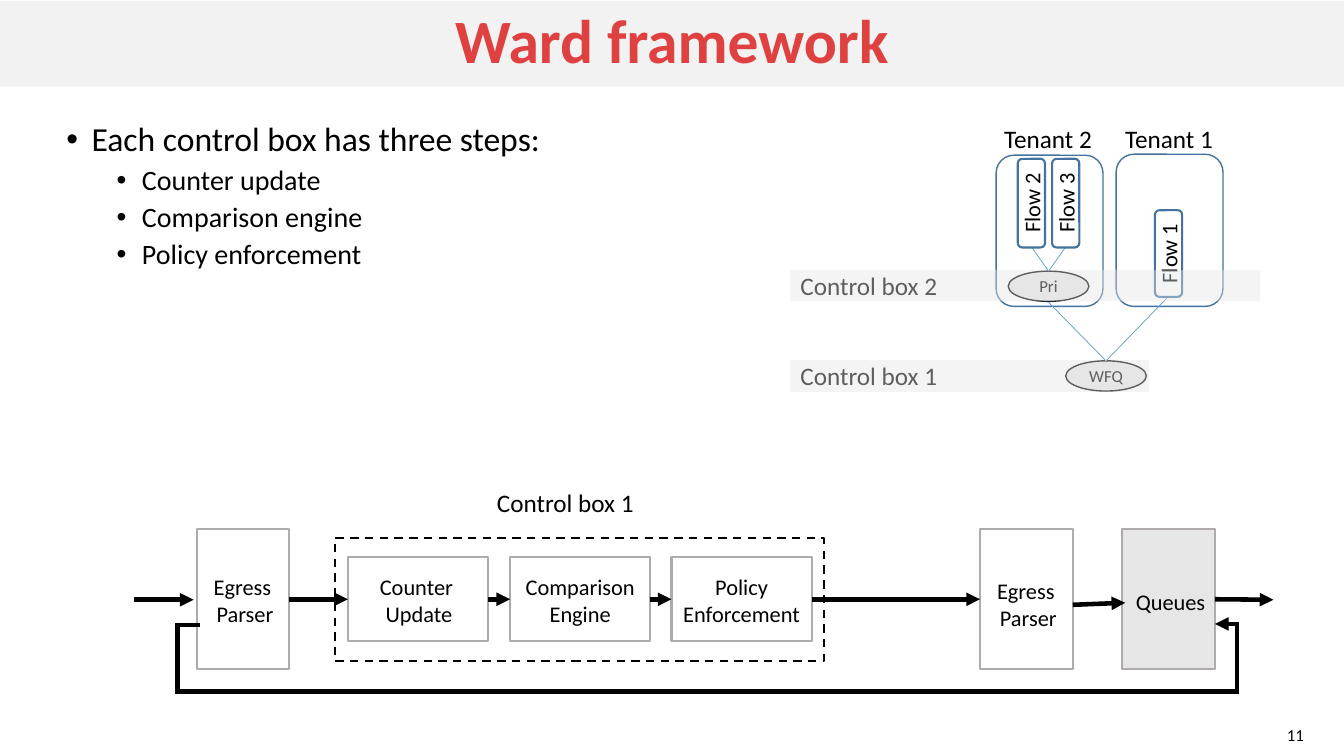
from lxml import etree
from pptx import Presentation
from pptx.dml.color import RGBColor
from pptx.enum.dml import MSO_LINE
from pptx.enum.shapes import MSO_CONNECTOR, MSO_SHAPE
from pptx.enum.text import MSO_ANCHOR, PP_ALIGN
from pptx.oxml.ns import qn
from pptx.util import Inches, Pt

RECT, ROUND, OVAL = MSO_SHAPE.RECTANGLE, MSO_SHAPE.ROUNDED_RECTANGLE, MSO_SHAPE.OVAL
STRAIGHT, DASH = MSO_CONNECTOR.STRAIGHT, MSO_LINE.DASH
LEFT, CENTER, RIGHT = PP_ALIGN.LEFT, PP_ALIGN.CENTER, PP_ALIGN.RIGHT
TOP, MIDDLE = MSO_ANCHOR.TOP, MSO_ANCHOR.MIDDLE
LEFT_SIDE, RIGHT_SIDE = 1, 3
FONT = "Calibri"
COLORS = {"black": "000000", "white": "FFFFFF", "band": "F2F2F2", "title": "DF4141",
          "gray": "E7E6E6", "border": "AFABAB", "blue": "43739E", "tree": "5B9BD5"}

TITLE = "Ward framework"
BULLETS = [(0, "Each control box has three steps:"), (1, "Counter update"),
           (1, "Comparison engine"), (1, "Policy enforcement")]
BULLET_LEVELS = [(24, 12, 0.25), (20, 5, 0.75)]
PAGE_NUMBER = "11"

STAGES = [
    ((1.95, 5.25, 0.92, 1.39), None, (1.98, 5.64, 0.9, 0.64), ["Egress ", "Parser"]),
    ((3.45, 5.53, 1.39, 0.83), None, (3.46, 5.64, 1.39, 0.64), ["Counter ", "Update"]),
    ((5.06, 5.53, 1.39, 0.83), None, (5.06, 5.64, 1.39, 0.64), ["Comparison", "Engine"]),
    ((6.66, 5.53, 1.39, 0.83), None, (6.66, 5.64, 1.39, 0.64), ["Policy Enforcement"]),
    ((9.72, 5.25, 0.92, 1.39), None, (9.75, 5.68, 0.9, 0.64), ["Egress ", "Parser"]),
    ((11.13, 5.25, 0.92, 1.39), "gray", (11.16, 5.79, 0.9, 0.37), ["Queues"]),
]
CONTROL_FRAME = (3.32, 5.34, 4.85, 1.22)
INPUT_ARROW = (1.33, 5.95, 1.92, 5.95)
QUEUE_ARROW = (10.64, 6, 11.16, 5.98)
OUTPUT_ARROW = (12.05, 5.95, 12.63, 5.95)
FEEDBACK = [(1.98, 6.2), (1.76, 6.2), (1.76, 6.86), (12.27, 6.86), (12.27, 6.19), (12.05, 6.19)]

TENANTS = [(9.88, 1.54, 1.06, 1.5), (11.07, 1.53, 1.06, 1.51)]
SCHEDULERS = [("Pri", (10, 2.69, 0.8, 0.3)), ("WFQ", (10.57, 3.58, 0.8, 0.3))]
BRANCHES = [(11.59, 2.94, 10.97, 3.58), (10.4, 3, 10.97, 3.58),
            (10.57, 2.45, 10.4, 2.69), (10.23, 2.45, 10.4, 2.69)]
FLOWS = [("Flow 2", (9.79, 1.88, 0.88, 0.27)), ("Flow 3", (10.13, 1.88, 0.88, 0.27)),
         ("Flow 1", (11.16, 2.38, 0.86, 0.27))]
CAPTIONS = [("Control box 1", (4.83, 4.79, 1.57, 0.4)), ("Tenant 2", (9.86, 1.17, 1.08, 0.4)),
            ("Tenant 1", (11.06, 1.17, 1.08, 0.4)), ("Control box 1", (7.84, 3.53, 1.57, 0.4)),
            ("Control box 2", (7.84, 2.63, 1.57, 0.4))]
VEILS = [(7.84, 3.57, 3.56, 0.32), (7.84, 2.68, 4.66, 0.31)]
VEIL_OPACITY = 41

deck = Presentation()
deck.slide_width, deck.slide_height = Inches(13.33), Inches(7.5)
page = deck.slides.add_slide(deck.slide_layouts[6])


def rgb(name):
    return RGBColor.from_string(COLORS[name])


def write(box, lines, size, align=CENTER, anchor=MIDDLE, wrap=True, color="black", bold=False):
    frame = box.text_frame
    frame.word_wrap, frame.vertical_anchor = wrap, anchor
    for index, line in enumerate(lines):
        para = frame.paragraphs[0] if index == 0 else frame.add_paragraph()
        para.text, para.alignment = line, align
        font = para.font
        font.name, font.size, font.bold = FONT, Pt(size), bold
        font.color.rgb = rgb(color)
    return frame.paragraphs


def add_box(kind, place, fill=None, line=None, width=1):
    box = page.shapes.add_shape(kind, *map(Inches, place))
    box.shadow.inherit = False
    if fill:
        box.fill.solid()
        box.fill.fore_color.rgb = rgb(fill)
    else:
        box.fill.background()
    if line:
        box.line.color.rgb, box.line.width = rgb(line), Pt(width)
    else:
        box.line.fill.background()
    return box


def add_label(place, lines, size, **options):
    return write(page.shapes.add_textbox(*map(Inches, place)), lines, size, **options)


def add_arrowhead(shape):
    etree.SubElement(shape.line._get_or_add_ln(), qn("a:tailEnd"), type="triangle")


def add_line(ends, color="black", width=3.25, arrow=True):
    line = page.shapes.add_connector(STRAIGHT, *map(Inches, ends))
    line.line.color.rgb, line.line.width = rgb(color), Pt(width)
    if arrow:
        add_arrowhead(line)
    etree.SubElement(line._element.spPr, qn("a:effectLst"))
    return line


def add_bullets():
    paras = add_label((0.56, 1.17, 12.33, 5.27), [text for _, text in BULLETS], 20,
                      align=LEFT, anchor=TOP)
    for para, (level, _) in zip(paras, BULLETS):
        size, space, margin = BULLET_LEVELS[level]
        para.level, para.line_spacing, para.space_before = level, 0.9, Pt(space)
        para.font.size = Pt(size)
        props = para._p.get_or_add_pPr()
        props.set("marL", str(Inches(margin)))
        props.set("indent", str(Inches(-0.25)))
        font = etree.Element(qn("a:buFont"), typeface="Arial")
        bullet = etree.Element(qn("a:buChar"), char="•")
        defaults = props.find(qn("a:defRPr"))
        defaults.addprevious(font)
        defaults.addprevious(bullet)


def add_pipeline():
    stages = []
    for place, fill, label_place, lines in STAGES:
        stages.append(add_box(RECT, place, fill, "border", 1.5))
        add_label(label_place, lines, 16, anchor=TOP)
    add_box(RECT, CONTROL_FRAME, None, "black", 1.5).line.dash_style = DASH
    for source, target in zip(stages[:4], stages[1:5]):
        arrow = add_line((0, 0, 1, 1))
        arrow.begin_connect(source, RIGHT_SIDE)
        arrow.end_connect(target, LEFT_SIDE)
    add_line(INPUT_ARROW)
    add_line(QUEUE_ARROW)
    add_line(OUTPUT_ARROW).begin_connect(stages[-1], RIGHT_SIDE)

    corners = [(Inches(x), Inches(y)) for x, y in FEEDBACK]
    builder = page.shapes.build_freeform(*corners[0])
    builder.add_line_segments(corners[1:], close=False)
    loop = builder.convert_to_shape()
    loop.shadow.inherit = False
    loop.fill.background()
    loop.line.color.rgb, loop.line.width = rgb("black"), Pt(3.25)
    etree.SubElement(loop.line._get_or_add_ln(), qn("a:miter"), lim="800000")
    add_arrowhead(loop)


def add_tree():
    for place in TENANTS:
        add_box(ROUND, place, "white", "blue")
    for name, place in SCHEDULERS:
        write(add_box(OVAL, place, "gray", "black"), [name], 12, wrap=False)
    for ends in BRANCHES:
        add_line(ends, "tree", 0.5, arrow=False)
    for name, place in FLOWS:
        flow = add_box(ROUND, place, None, "blue", 1.5)
        flow.rotation = 270
        write(flow, [name], 16, wrap=False)


def main():
    """Build the slide and save it."""
    band = add_box(RECT, (0, 0.01, 13.33, 0.85), "band")
    write(band, [TITLE], 44, color="title", bold=True)[0].line_spacing = 0.9
    add_bullets()
    add_label((11.96, 7.14, 1.07, 0.3), [PAGE_NUMBER], 12, align=RIGHT, anchor=MIDDLE)
    add_pipeline()
    add_tree()
    for text, place in CAPTIONS:
        add_label(place, [text], 18, align=LEFT, anchor=TOP, wrap=False)
    for place in VEILS:
        veil = add_box(RECT, place, "gray")
        color = veil._element.spPr.find(qn("a:solidFill")).find(qn("a:srgbClr"))
        etree.SubElement(color, qn("a:alpha"), val=str(VEIL_OPACITY * 1000))
    deck.save("out.pptx")


if __name__ == "__main__":
    main()
